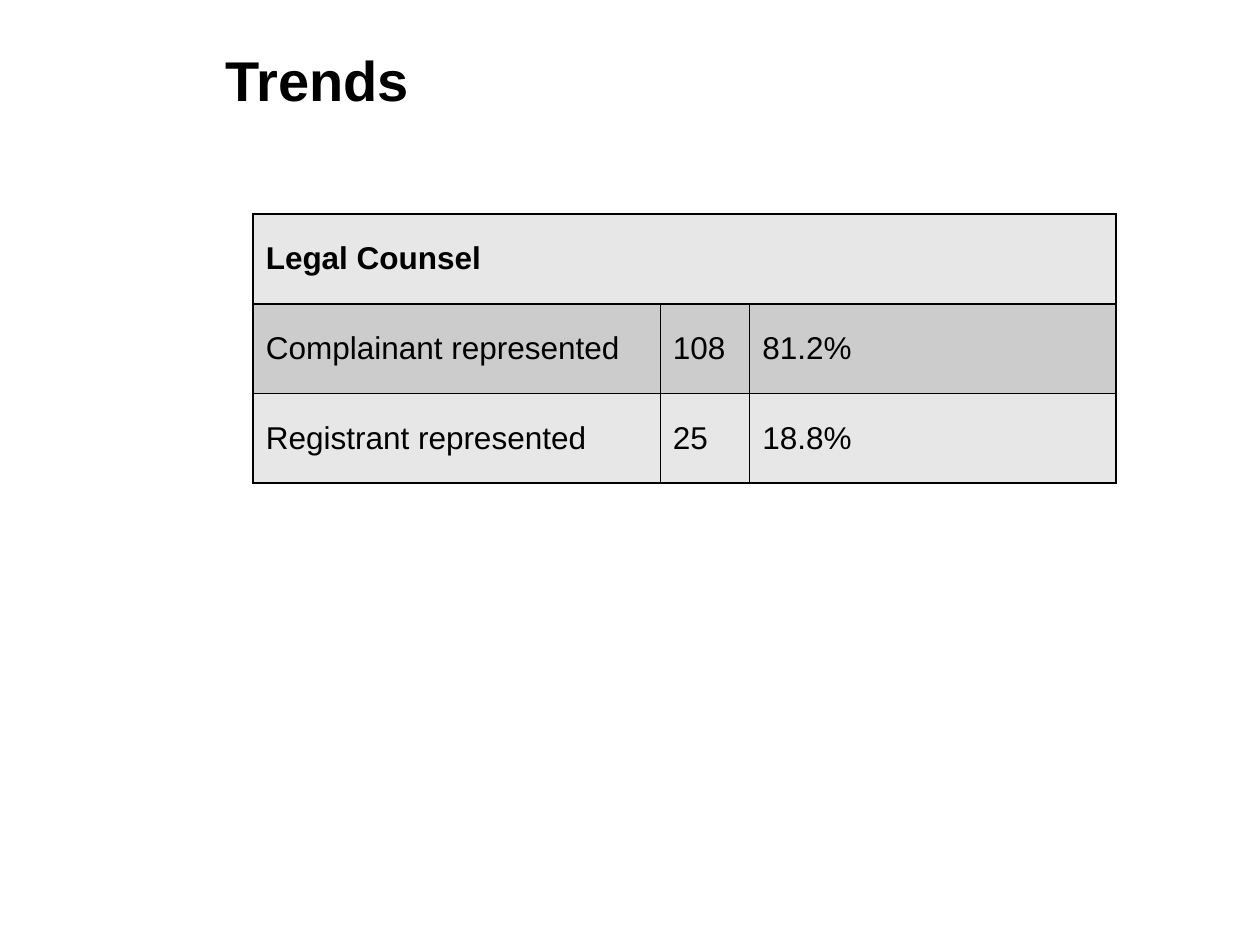
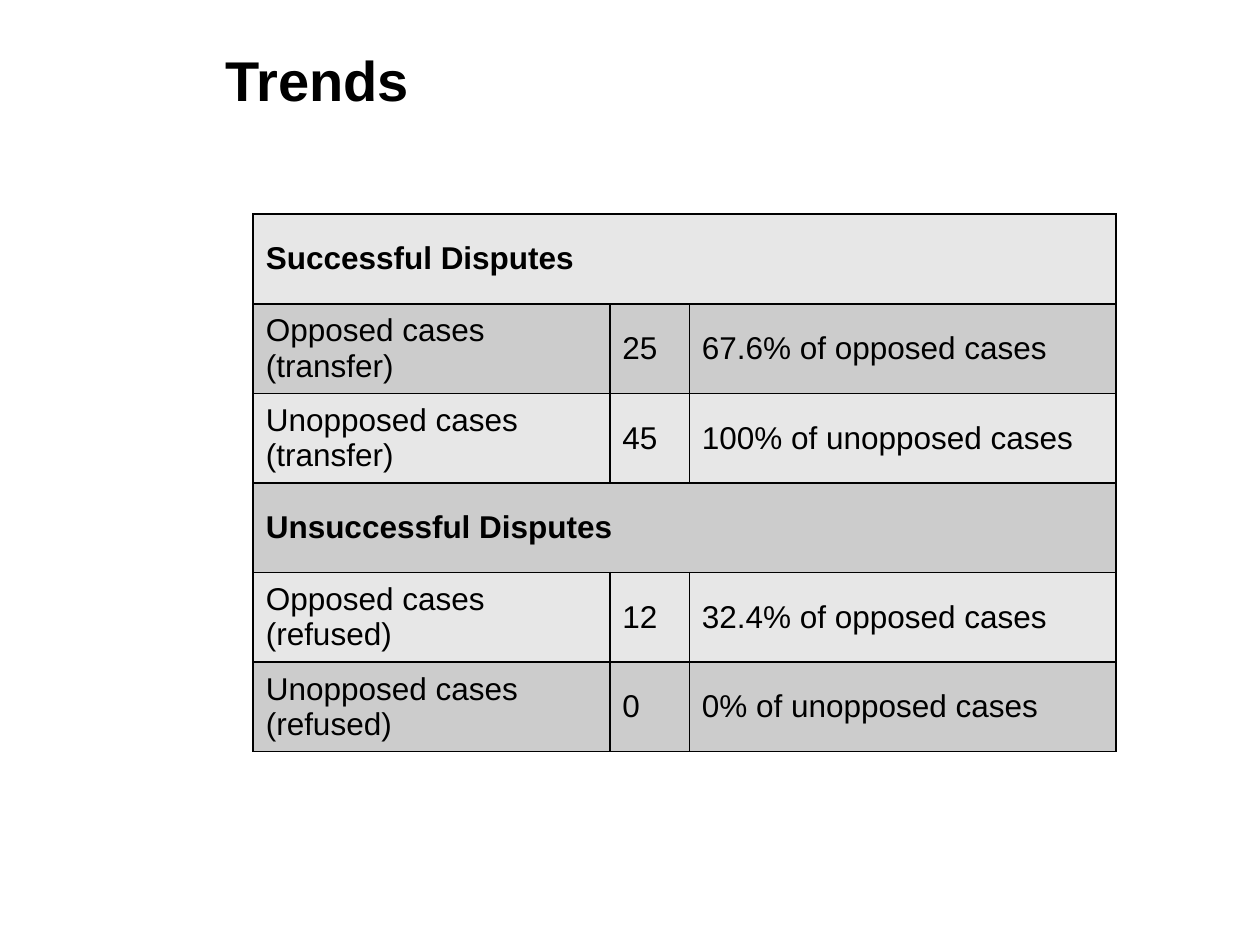
import dataclasses

import lxml.etree
import pptx
import pptx.dml.color
import pptx.enum.text
import pptx.oxml.ns
import pptx.util

Pt = pptx.util.Pt
MIDDLE = pptx.enum.text.MSO_ANCHOR.MIDDLE

# A row with a single entry is a heading that spans the whole table.
SLIDES = [
    {
        "title": "Trends",
        "column_widths": (232.6, 51.1, 209.5),
        "rows": [
            ("Legal Counsel",),
            ("Complainant represented", "108", "81.2%"),
            ("Registrant represented", "25", "18.8%"),
        ],
    },
    {
        "title": "Trends",
        "column_widths": (203.8, 45.4, 244),
        "rows": [
            ("Successful Disputes",),
            ("Opposed cases (transfer)", "25", "67.6% of opposed cases"),
            ("Unopposed cases (transfer)", "45", "100% of unopposed cases"),
            ("Unsuccessful Disputes",),
            ("Opposed cases (refused)", "12", "32.4% of opposed cases"),
            ("Unopposed cases (refused)", "0", "0% of unopposed cases"),
        ],
    },
]


@dataclasses.dataclass(frozen=True)
class Theme:
    font: str = "Arial"
    title_size: int = 32
    table_size: int = 18
    ink: str = "000000"
    row_fills: tuple = ("E7E7E7", "CCCCCC")
    border_width: int = 1


THEME = Theme()
SLIDE_SIZE = (720, 540)
TITLE_BOX = (121.7, 0, 598.3, 90)
TABLE_LEFT, TABLE_TOP = 144.7, 122.4
ROW_HEIGHT = 51.2


def color(value):
    return pptx.dml.color.RGBColor.from_string(value)


def write_text(text_frame, text, size, bold):
    text_frame.text = text
    text_frame.word_wrap = True
    font = text_frame.paragraphs[0].runs[0].font
    font.name = THEME.font
    font.size = Pt(size)
    font.bold = bold
    font.color.rgb = color(THEME.ink)


def add_title(slide, title):
    box = slide.shapes.add_textbox(*map(Pt, TITLE_BOX))
    write_text(box.text_frame, title, THEME.title_size, True)
    box.text_frame.vertical_anchor = MIDDLE


def add_borders(cell):
    """Draw all four sides; borders must precede the fill in the cell XML."""
    properties = cell._tc.get_or_add_tcPr()
    qn = pptx.oxml.ns.qn
    for position, side in enumerate(("a:lnL", "a:lnR", "a:lnT", "a:lnB")):
        line = lxml.etree.Element(qn(side), w=str(Pt(THEME.border_width)))
        fill = lxml.etree.SubElement(line, qn("a:solidFill"))
        lxml.etree.SubElement(fill, qn("a:srgbClr"), val=THEME.ink)
        properties.insert(position, line)


def add_trend_table(slide, column_widths, rows):
    frame = slide.shapes.add_table(
        len(rows), len(column_widths), Pt(TABLE_LEFT), Pt(TABLE_TOP),
        Pt(sum(column_widths)), Pt(ROW_HEIGHT * len(rows)))
    table = frame.table
    for column, width in zip(table.columns, column_widths):
        column.width = Pt(width)
    for row_index, entries in enumerate(rows):
        table.rows[row_index].height = Pt(ROW_HEIGHT)
        is_heading = len(entries) == 1
        cells = list(table.rows[row_index].cells)
        if is_heading:
            cells[0].merge(cells[-1])
        for cell in cells:
            cell.fill.solid()
            cell.fill.fore_color.rgb = color(THEME.row_fills[row_index % 2])
            cell.vertical_anchor = MIDDLE
            add_borders(cell)
        for cell, entry in zip(cells, entries):
            write_text(cell.text_frame, entry, THEME.table_size, is_heading)


def main():
    presentation = pptx.Presentation()
    presentation.slide_width, presentation.slide_height = map(Pt, SLIDE_SIZE)
    blank_layout = presentation.slide_layouts[6]
    for content in SLIDES:
        slide = presentation.slides.add_slide(blank_layout)
        add_title(slide, content["title"])
        add_trend_table(slide, content["column_widths"], content["rows"])
    presentation.save("out.pptx")


if __name__ == "__main__":
    main()
